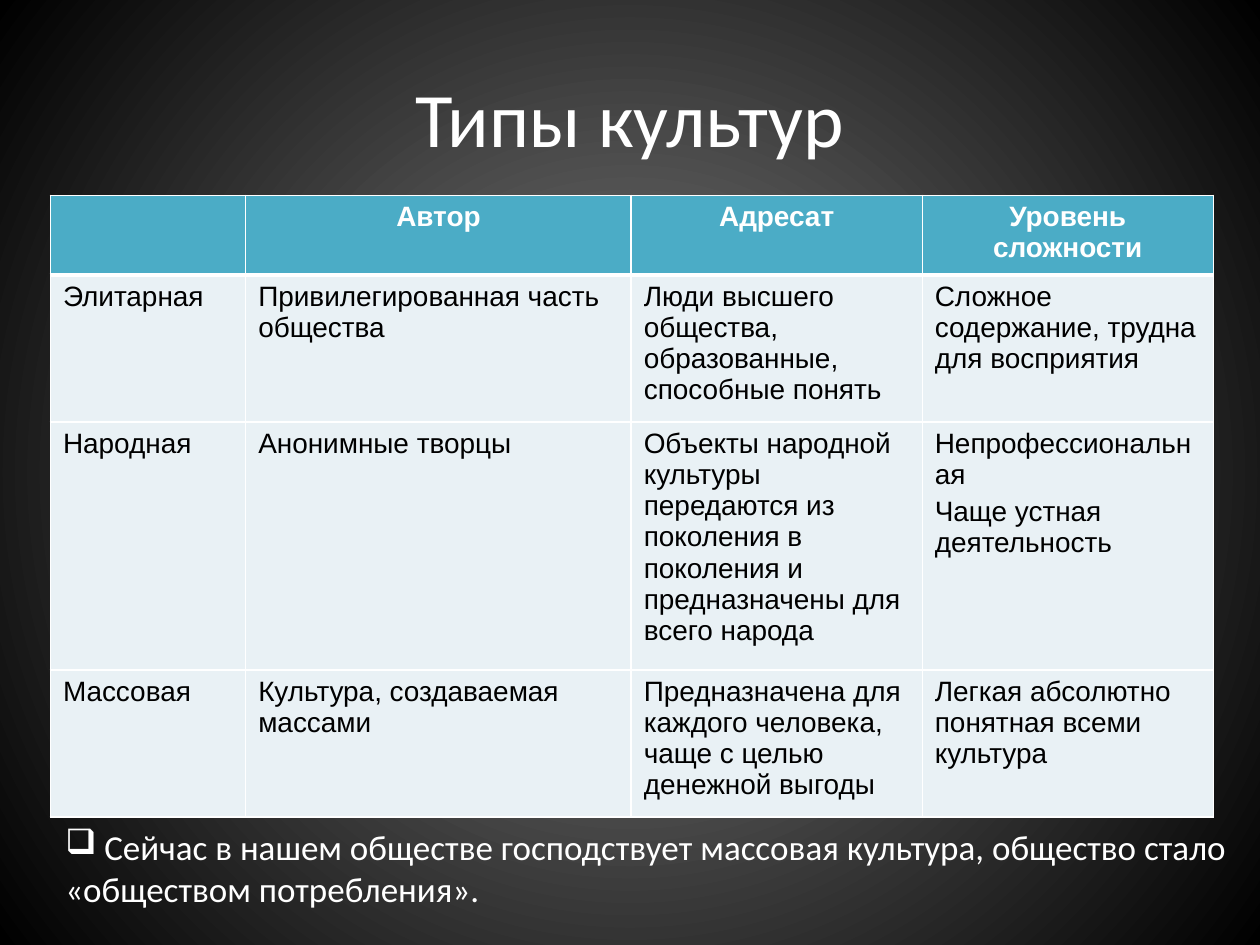
from lxml.etree import SubElement
from pptx import Presentation
from pptx.dml.color import RGBColor
from pptx.enum.text import MSO_ANCHOR as Anchor, PP_ALIGN as Align
from pptx.oxml.ns import qn
from pptx.util import Inches, Pt

TITLE = "Типы культур"
HEADER = ["", "Автор", "Адресат", "Уровень сложности"]
CULTURES = [
    ["Элитарная", "Привилегированная часть общества",
     "Люди высшего общества, образованные, способные понять",
     "Сложное содержание, трудна для восприятия"],
    ["Народная", "Анонимные творцы",
     "Объекты народной культуры передаются из поколения в поколения "
     "и предназначены для всего народа",
     "Непрофессиональная\nЧаще устная деятельность"],
    ["Массовая", "Культура, создаваемая массами",
     "Предназначена для каждого человека, чаще с целью денежной выгоды",
     "Легкая абсолютно понятная всеми культура"],
]
CONCLUSION = ["Сейчас в нашем обществе господствует массовая культура, общество стало",
              "«обществом потребления»."]

COLORS = {"glow": "7F7F7F", "edge": "000000", "white": "FFFFFF",
          "black": "000000", "header": "4BACC6", "body": "E9F1F5"}
TITLE_FONT = {"name": "Calibri", "size": Pt(44), "color": "white"}
HEADER_FONT = {"name": "Arial", "size": Pt(16), "bold": True, "color": "white"}
BODY_FONT = {**HEADER_FONT, "bold": False, "color": "black"}
CONCLUSION_FONT = {**TITLE_FONT, "size": Pt(20)}

COLUMN_WIDTHS = [1.55, 3.06, 2.31, 2.31]
ROW_HEIGHTS = [0.5, 0.92, 0.92, 0.92]
BULLET_INDENT = Inches(0.31)


def rgb(key):
    return RGBColor.from_string(COLORS[key])


def write(frame, lines, style, align=Align.LEFT, gap=0):
    frame.text = "\n".join(lines)
    for index, paragraph in enumerate(frame.paragraphs):
        paragraph.alignment = align
        if index:
            paragraph.space_before = Pt(gap)
        for key, value in style.items():
            if key == "color":
                paragraph.font.color.rgb = rgb(value)
            else:
                setattr(paragraph.font, key, value)
        for run in paragraph.runs:
            run.font.size = style["size"]
            run.font.name = style["name"]
            run.font.bold = style.get("bold", False)
            run.font.color.rgb = rgb(style["color"])


def paint_background(slide):
    """Radial gradient from the centre of the slide to its corners."""
    fill = slide.background.fill
    fill.gradient()
    for stop, key in zip(fill.gradient_stops, ("glow", "edge")):
        stop.color.rgb = rgb(key)
    gradient = slide.element.find(".//" + qn("a:gradFill"))
    gradient.remove(gradient.find(qn("a:lin")))
    circle = SubElement(gradient, qn("a:path"), path="circle")
    SubElement(circle, qn("a:fillToRect"), {side: "50000" for side in "ltrb"})


def add_borders(cell, widths):
    properties = cell._tc.get_or_add_tcPr()
    for side, width in widths.items():
        line = SubElement(properties, qn("a:ln" + side), w=str(Pt(width)))
        solid = SubElement(line, qn("a:solidFill"))
        SubElement(solid, qn("a:srgbClr"), val=COLORS["white"])


def add_culture_table(slide):
    rows = [HEADER] + CULTURES
    table = slide.shapes.add_table(
        len(rows), len(HEADER), Inches(0.4), Inches(1.55),
        Inches(sum(COLUMN_WIDTHS)), Inches(sum(ROW_HEIGHTS))).table
    table.first_row = table.horz_banding = False
    for column, width in zip(table.columns, COLUMN_WIDTHS):
        column.width = Inches(width)
    for r, (row, height) in enumerate(zip(rows, ROW_HEIGHTS)):
        table.rows[r].height = Inches(height)
        is_header = r == 0
        for c, content in enumerate(row):
            cell = table.cell(r, c)
            add_borders(cell, {"L": 1, "R": 1, "T": 3 if r == 1 else 1,
                               "B": 3 if is_header else 1})
            cell.fill.solid()
            cell.fill.fore_color.rgb = rgb("header" if is_header else "body")
            write(cell.text_frame, content.split("\n"),
                  HEADER_FONT if is_header else BODY_FONT,
                  Align.CENTER if is_header else Align.LEFT, gap=3.2)


def add_text(slide, left, top, width, height):
    box = slide.shapes.add_textbox(*map(Inches, (left, top, width, height)))
    return box.text_frame


def main():
    prs = Presentation()
    prs.slide_width, prs.slide_height = Inches(10), Inches(7.5)
    slide = prs.slides.add_slide(prs.slide_layouts[6])
    paint_background(slide)

    title = add_text(slide, 0.5, 0.3, 9, 1.25)
    title.word_wrap = True
    title.vertical_anchor = Anchor.MIDDLE
    write(title, [TITLE], TITLE_FONT, Align.CENTER)

    add_culture_table(slide)

    conclusion = add_text(slide, 0.42, 6.5, 9.5, 1.11)
    conclusion.word_wrap = False
    write(conclusion, CONCLUSION, CONCLUSION_FONT)
    bulleted = conclusion.paragraphs[0]._p.get_or_add_pPr()
    bulleted.set("marL", str(BULLET_INDENT))
    bulleted.set("indent", str(-BULLET_INDENT))
    bullet = bulleted.makeelement(qn("a:buChar"), {"char": "❑"})
    bulleted.insert(0, bullet)

    prs.save("out.pptx")


if __name__ == "__main__":
    main()
